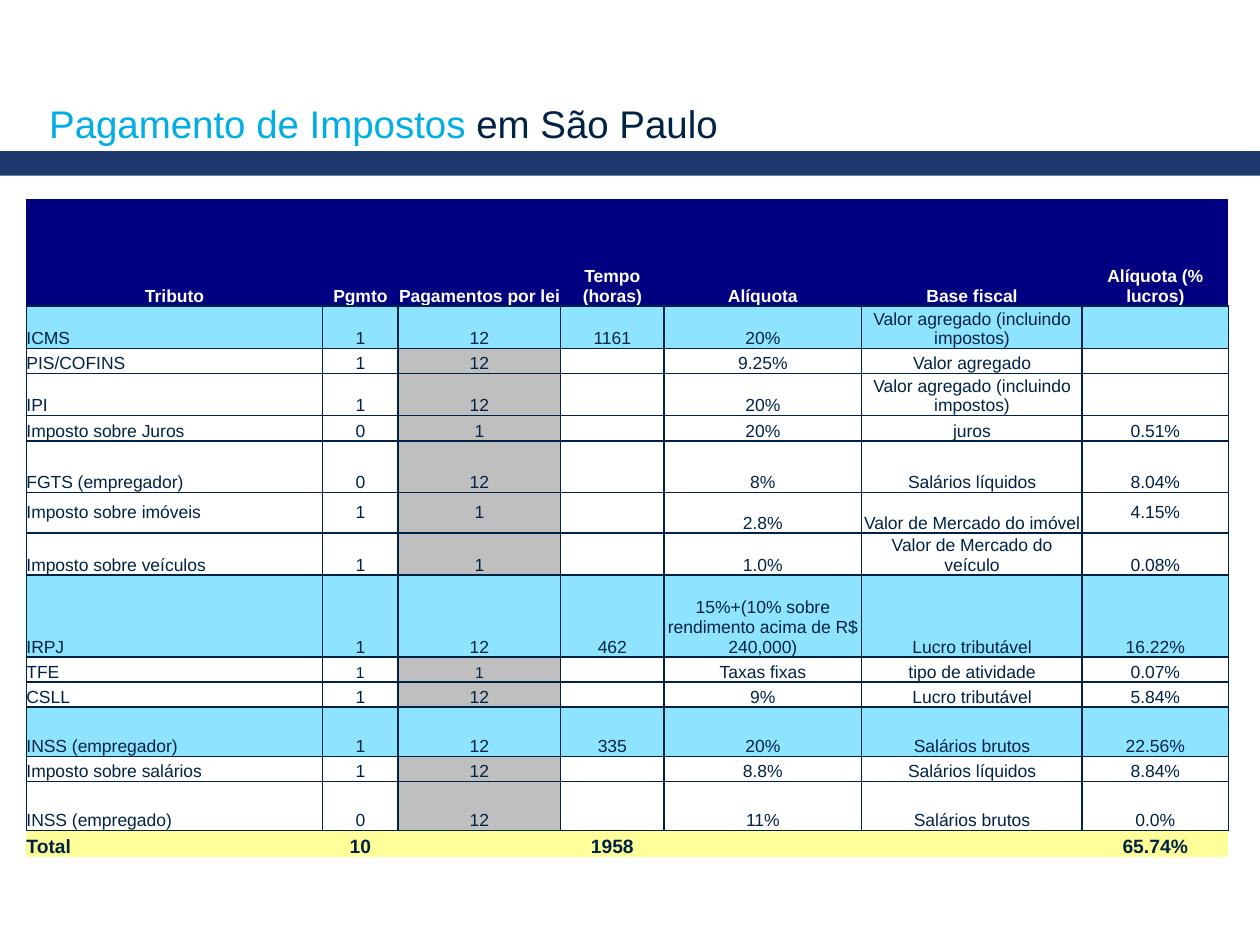
from dataclasses import dataclass
from typing import NamedTuple

from lxml.etree import SubElement
from pptx import Presentation
from pptx.dml.color import RGBColor
from pptx.enum.shapes import MSO_SHAPE
from pptx.enum.text import MSO_ANCHOR, PP_ALIGN
from pptx.oxml.ns import qn
from pptx.util import Emu, Inches, Pt

NAVY = RGBColor(0x00, 0x23, 0x45)
CYAN = RGBColor(0x00, 0xAD, 0xE4)
BAND = RGBColor(0x1F, 0x39, 0x6F)
HEAD = RGBColor(0x00, 0x00, 0x80)
SKY = RGBColor(0x8E, 0xE4, 0xFF)
GREY = RGBColor(0xBF, 0xBF, 0xBF)
CREAM = RGBColor(0xFF, 0xFF, 0x99)
WHITE = RGBColor(0xFF, 0xFF, 0xFF)

WIDTH, HEIGHT = Inches(10), Inches(7.5)
FONT = "Arial"
LEGAL = 2  # column of payments by law, grey in plain rows
COLS = (2.35, 0.6, 1.29, 0.82, 1.57, 1.75, 1.16)


class Area(NamedTuple):
    """A place on the slide, in percent of its width and height."""
    left: float
    top: float
    width: float
    height: float

    def emu(self) -> list[Emu]:
        return [Emu(round(side * part / 100))
                for side, part in zip((WIDTH, HEIGHT) * 2, self)]


@dataclass(frozen=True)
class Style:
    fill: RGBColor
    legal: RGBColor
    ink: RGBColor = NAVY
    size: int = 10
    bold: bool = False
    edges: str = "LRTB"


PLAIN = Style(WHITE, GREY)
MAIN = Style(SKY, SKY)
TITLE = Style(HEAD, HEAD, WHITE, bold=True, edges="B")
TOTAL = Style(CREAM, CREAM, size=11, bold=True, edges="T")


class Row(NamedTuple):
    height: float
    style: Style
    texts: tuple[str, ...]
    middle: tuple[int, ...] = ()  # columns centred vertically
    small: tuple[int, ...] = ()  # columns set one point smaller


ROWS = (
    Row(0.85, TITLE, ("Tributo", "Pgmto", "Pagamentos por lei", "Tempo (horas)",
                      "Alíquota", "Base fiscal", "Alíquota (% lucros)")),
    Row(0.32, MAIN, ("ICMS", "1", "12", "1161", "20%",
                     "Valor agregado (incluindo impostos)", "")),
    Row(0.2, PLAIN, ("PIS/COFINS", "1", "12", "", "9.25%", "Valor agregado", "")),
    Row(0.32, PLAIN, ("IPI", "1", "12", "", "20%",
                      "Valor agregado (incluindo impostos)", "")),
    Row(0.2, PLAIN, ("Imposto sobre Juros", "0", "1", "", "20%", "juros", "0.51%")),
    Row(0.41, PLAIN, ("FGTS (empregador)", "0", "12", "", "8%",
                      "Salários líquidos", "8.04%")),
    Row(0.32, PLAIN, ("Imposto sobre imóveis", "1", "1", "", "2.8%",
                      "Valor de Mercado do imóvel", "4.15%"), middle=(0, 1, 2, 6)),
    Row(0.32, PLAIN, ("Imposto sobre veículos", "1", "1", "", "1.0%",
                      "Valor de Mercado do veículo", "0.08%")),
    Row(0.65, MAIN, ("IRPJ", "1", "12", "462",
                     "15%+(10% sobre rendimento acima de R$ 240,000)",
                     "Lucro tributável", "16.22%")),
    Row(0.2, PLAIN, ("TFE", "1", "1", "", "Taxas fixas", "tipo de atividade",
                     "0.07%"), small=(1, 2)),
    Row(0.2, PLAIN, ("CSLL", "1", "12", "", "9%", "Lucro tributável", "5.84%")),
    Row(0.39, MAIN, ("INSS (empregador)", "1", "12", "335", "20%",
                     "Salários brutos", "22.56%")),
    Row(0.2, PLAIN, ("Imposto sobre salários", "1", "12", "", "8.8%",
                     "Salários líquidos", "8.84%")),
    Row(0.39, PLAIN, ("INSS (empregado)", "0", "12", "", "11%",
                      "Salários brutos", "0.0%")),
    Row(0.21, TOTAL, ("Total", "10", "", "1958", "", "", "65.74%")),
)


def zero(box) -> None:
    """Remove the inner margins of a cell or text frame."""
    box.margin_left = box.margin_right = box.margin_top = box.margin_bottom = 0


def border(cell, edges: str) -> None:
    """Draw the named edges and clear the others; call before filling."""
    props = cell._tc.get_or_add_tcPr()
    for edge in "LRTB":
        line = SubElement(props, qn(f"a:ln{edge}"), w=str(Pt(1)))
        if edge in edges:
            fill = SubElement(line, qn("a:solidFill"))
            SubElement(fill, qn("a:srgbClr"), val=str(NAVY))
        else:
            SubElement(line, qn("a:noFill"))


def draw_cell(cell, row: Row, col: int) -> None:
    style, text = row.style, row.texts[col]
    border(cell, style.edges)
    cell.fill.solid()
    cell.fill.fore_color.rgb = style.legal if col == LEGAL else style.fill
    zero(cell)
    cell.vertical_anchor = MSO_ANCHOR.MIDDLE if col in row.middle else MSO_ANCHOR.BOTTOM
    cell.text = text
    para = cell.text_frame.paragraphs[0]
    centred = col > 0 or style is TITLE
    para.alignment = PP_ALIGN.CENTER if centred else PP_ALIGN.LEFT
    size = style.size - (col in row.small)
    font = para.font
    font.name, font.size, font.bold = FONT, Pt(size), style.bold
    font.color.rgb = style.ink
    if not text:  # keeps an empty cell from stretching its row
        SubElement(para._p, qn("a:endParaRPr"), sz=str(size * 100))


def draw_table(slide) -> None:
    area = Area(2.1, 21.07, 95.3, 69.2)
    table = slide.shapes.add_table(len(ROWS), len(COLS), *area.emu()).table
    table.first_row = table.horz_banding = False
    for col, width in zip(table.columns, COLS):
        col.width = Inches(width)
    for r, row in enumerate(ROWS):
        table.rows[r].height = Inches(row.height)
        for c in range(len(COLS)):
            draw_cell(table.cell(r, c), row, c)


def draw_band(slide) -> None:
    band = slide.shapes.add_shape(MSO_SHAPE.RECTANGLE, *Area(0, 16, 100, 2.6).emu())
    band.shadow.inherit = False
    band.fill.solid()
    band.fill.fore_color.rgb = BAND
    band.line.fill.background()


def draw_title(slide) -> None:
    frame = slide.shapes.add_textbox(*Area(3.9, 4.4, 92.5, 11.07).emu()).text_frame
    frame.word_wrap = True
    frame.vertical_anchor = MSO_ANCHOR.BOTTOM
    zero(frame)
    para = frame.paragraphs[0]
    para.font.name, para.font.size = FONT, Pt(22)
    for text, ink in (("Pagamento de Impostos ", CYAN), ("em São Paulo", NAVY)):
        run = para.add_run()
        run.text = text
        run.font.color.rgb = ink


def main() -> None:
    deck = Presentation()
    deck.slide_width, deck.slide_height = WIDTH, HEIGHT
    slide = deck.slides.add_slide(deck.slide_layouts[6])
    draw_band(slide)
    draw_title(slide)
    draw_table(slide)
    deck.save("out.pptx")


if __name__ == "__main__":
    main()
